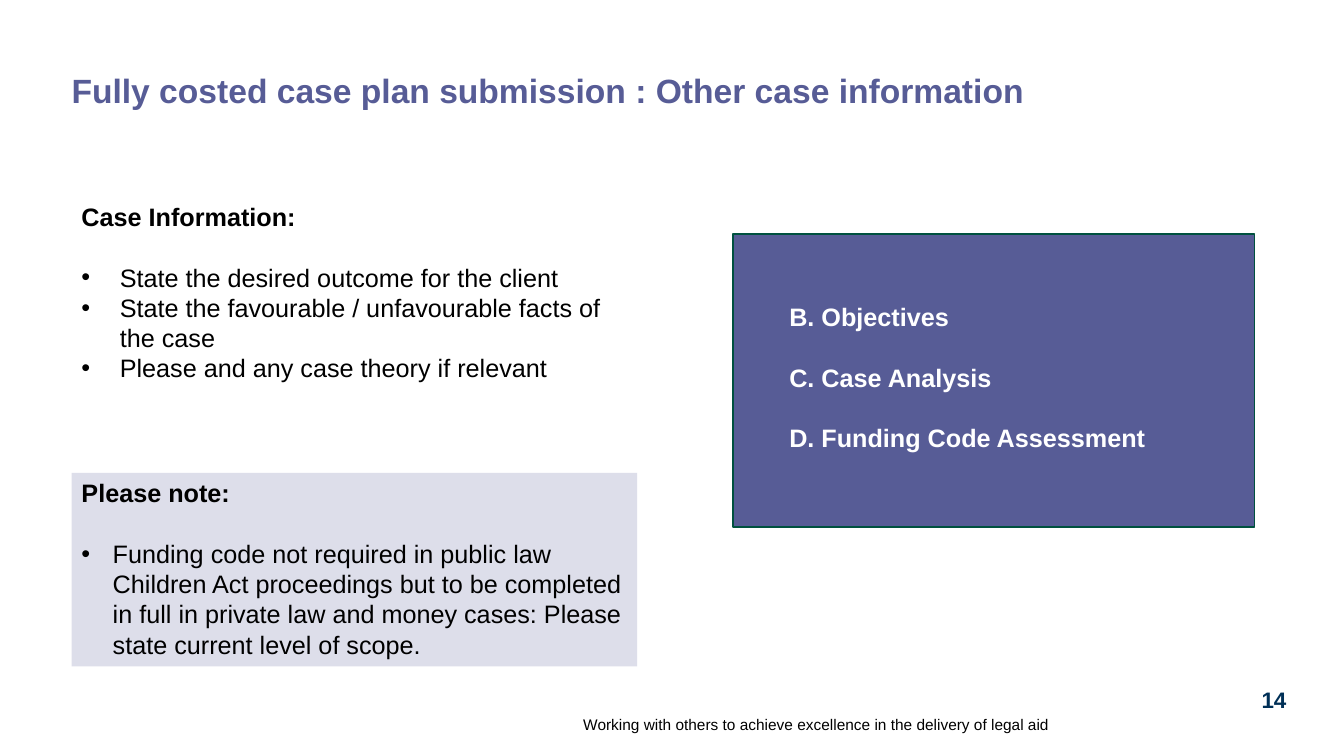
from dataclasses import dataclass

from lxml import etree
from pptx import Presentation
from pptx import util as u
from pptx.dml.color import RGBColor
from pptx.enum import shapes, text
from pptx.oxml import ns

SCALE = 9144


def px(length):
    return u.Emu(length * SCALE)


@dataclass(frozen=True)
class Theme:
    font: str = "Arial"
    purple: str = "575C96"
    lilac: str = "DDDEEA"
    green: str = "00513F"
    navy: str = "003057"
    black: str = "000000"
    white: str = "FFFFFF"
    title: int = 24
    body: int = 18
    number: int = 16
    footer: int = 11
    line_gap: float = 21.6


class CasePlanSlide:
    def __init__(self, deck, theme):
        self.theme = theme
        self.slide = deck.slides.add_slide(deck.slide_layouts[5])

    def frame(self, shape, margins=(10, 5), anchor=text.MSO_ANCHOR.TOP):
        frame = shape.text_frame
        frame.word_wrap = True
        frame.auto_size = text.MSO_AUTO_SIZE.NONE
        frame.vertical_anchor = anchor
        frame.margin_left = frame.margin_right = px(margins[0])
        frame.margin_top = frame.margin_bottom = px(margins[1])
        return frame

    def add_words(self, paragraph, words, size, color, bold=False, align=text.PP_ALIGN.LEFT):
        paragraph.alignment = align
        run = paragraph.add_run()
        run.text = words
        run.font.name = self.theme.font
        run.font.size = u.Pt(size)
        run.font.bold = bold
        run.font.color.rgb = RGBColor.from_string(color)

    def bullet(self, paragraph, indent):
        properties = paragraph._p.get_or_add_pPr()
        properties.set("marL", str(px(indent)))
        properties.set("indent", str(-px(indent)))
        etree.SubElement(properties, ns.qn("a:buFont")).set("typeface", self.theme.font)
        etree.SubElement(properties, ns.qn("a:buChar")).set("char", "•")

    def title(self, words, box):
        heading = self.slide.shapes.title
        heading.left, heading.top, heading.width, heading.height = map(px, box)
        paragraph = self.frame(heading, (0, 0)).paragraphs[0]
        paragraph.line_spacing = 0.9
        self.add_words(paragraph, words, self.theme.title, self.theme.purple, True)

    def panel(self, box, fill, line=None):
        panel = self.slide.shapes.add_shape(shapes.MSO_SHAPE.RECTANGLE, *map(px, box))
        panel.shadow.inherit = False
        panel.fill.solid()
        panel.fill.fore_color.rgb = RGBColor.from_string(fill)
        if line:
            panel.line.color.rgb = RGBColor.from_string(line)
            panel.line.width = u.Pt(1)
        else:
            panel.line.fill.background()
        return panel

    def text_box(self, box):
        return self.slide.shapes.add_textbox(*map(px, box))

    def label(self, words, box, size, color, anchor=text.MSO_ANCHOR.TOP, **style):
        paragraph = self.frame(self.text_box(box), (0, 0), anchor).paragraphs[0]
        self.add_words(paragraph, words, size, color, **style)

    def bullet_list(self, shape, heading, points, indent):
        frame = self.frame(shape)
        self.add_words(frame.paragraphs[0], heading, self.theme.body, self.theme.black, True)
        for index, point in enumerate(points):
            paragraph = frame.add_paragraph()
            self.bullet(paragraph, indent)
            paragraph.space_before = u.Pt(0 if index else self.theme.line_gap)
            self.add_words(paragraph, point, self.theme.body, self.theme.black)

    def sections(self, shape, names):
        frame = self.frame(shape)
        for index, name in enumerate(names):
            paragraph = frame.add_paragraph() if index else frame.paragraphs[0]
            paragraph.space_before = u.Pt(self.theme.line_gap if index else 0)
            self.add_words(paragraph, name, self.theme.body, self.theme.white, True)

    def group(self, *members):
        self.slide.shapes.add_group_shape(members)


def main():
    deck = Presentation()
    deck.slide_width, deck.slide_height = px(1333), px(750)
    theme = Theme()
    page = CasePlanSlide(deck, theme)

    page.title("Fully costed case plan submission : Other case information", (71, 74, 1204, 38))

    case_information = page.text_box((71, 195, 575, 192))
    page.bullet_list(case_information, "Case Information:", [
        "State the desired outcome for the client",
        "State the favourable / unfavourable facts of the case",
        "Please and any case theory if relevant",
    ], 38)

    please_note = page.panel((71, 469, 561, 192), theme.lilac)
    page.bullet_list(please_note, "Please note:", [
        "Funding code not required in public law Children Act proceedings but to be "
        "completed in full in private law and money cases: Please state current level of scope.",
    ], 31)

    page.label("Working with others to achieve excellence in the delivery of legal aid",
               (57, 692, 984, 36), theme.footer, theme.black,
               align=text.PP_ALIGN.RIGHT, anchor=text.MSO_ANCHOR.BOTTOM)

    form_panel = page.panel((727, 232, 517, 291), theme.purple, theme.green)
    form_sections = page.text_box((773, 294, 425, 162))
    page.sections(form_sections, ["B. Objectives", "C. Case Analysis", "D. Funding Code Assessment"])
    page.group(form_panel, form_sections)

    page.label("14", (1244, 681, 39, 28), theme.number, theme.navy,
               bold=True, align=text.PP_ALIGN.CENTER)

    deck.save("out.pptx")


if __name__ == "__main__":
    main()
